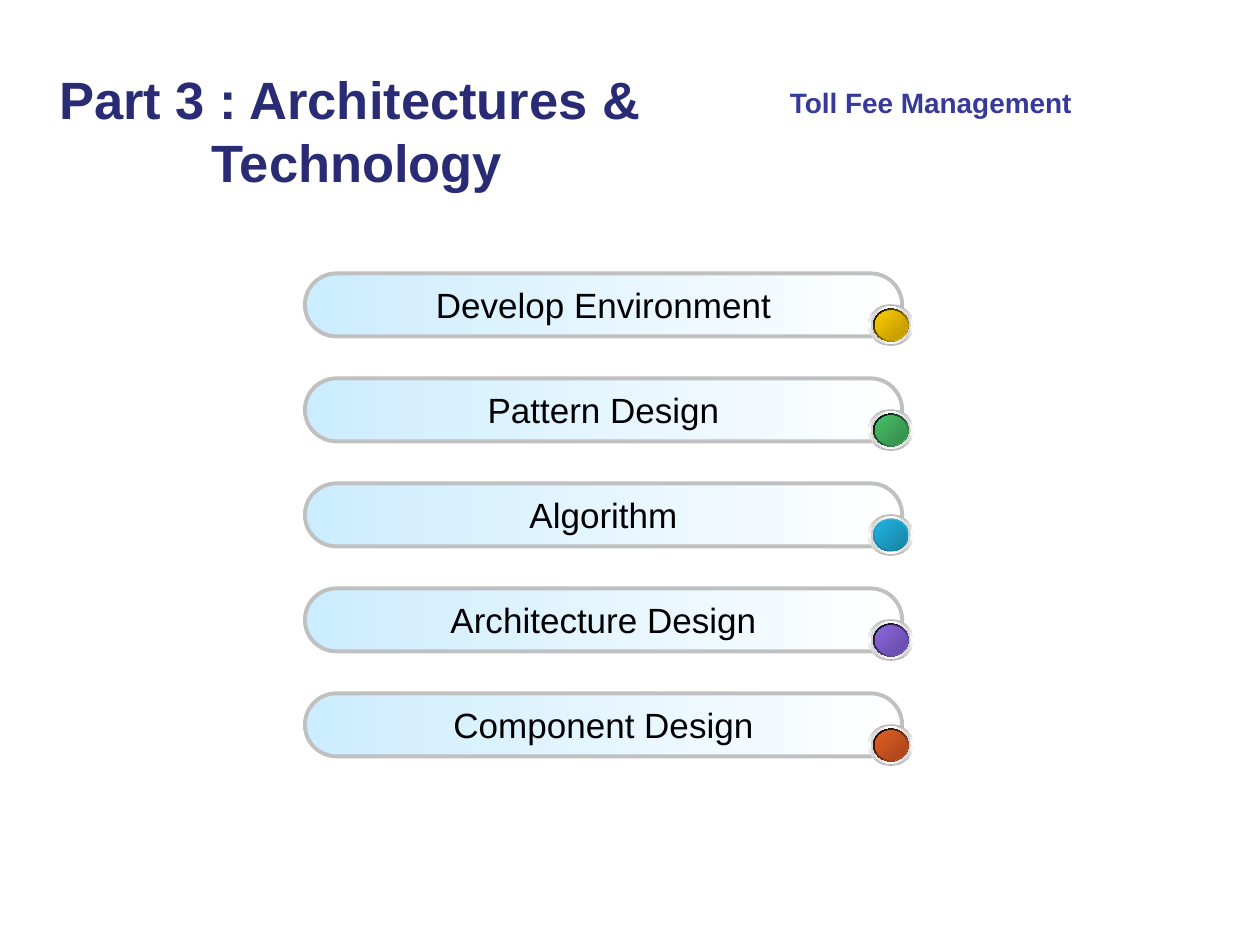
from lxml.etree import SubElement
from pptx import Presentation
from pptx.dml.color import RGBColor
from pptx.enum.shapes import MSO_SHAPE
from pptx.enum.text import MSO_ANCHOR, PP_ALIGN
from pptx.oxml.ns import qn
from pptx.util import Inches, Pt

NAVY = RGBColor(0x29, 0x2B, 0x74)
INDIGO = RGBColor(0x37, 0x39, 0x9B)
BLACK = RGBColor(0x00, 0x00, 0x00)
WHITE = RGBColor(0xFF, 0xFF, 0xFF)
SILVER = RGBColor(0xC0, 0xC0, 0xC0)
PALE_BLUE = RGBColor(0xCC, 0xEC, 0xFF)
GREY = RGBColor(0xB6, 0xB6, 0xB6)
LIGHT_GREY = RGBColor(0xD1, 0xD1, 0xD1)
TEAL = RGBColor(0x36, 0xA1, 0xB6)
DARK_TEAL = RGBColor(0x29, 0x7B, 0x8B)
YELLOW = RGBColor(0xFF, 0xCC, 0x00)
DARK_YELLOW = RGBColor(0xBA, 0x95, 0x00)
GREEN = RGBColor(0x48, 0xBE, 0x67)
DARK_GREEN = RGBColor(0x35, 0x8B, 0x4B)
BLUE = RGBColor(0x21, 0xB3, 0xE1)
RIM_BLUE = RGBColor(0x18, 0x80, 0xA1)
DARK_BLUE = RGBColor(0x18, 0x83, 0xA4)
PURPLE = RGBColor(0x8D, 0x67, 0xE1)
DARK_PURPLE = RGBColor(0x67, 0x4B, 0xA4)
ORANGE = RGBColor(0xE3, 0x5E, 0x23)
DARK_ORANGE = RGBColor(0xA6, 0x45, 0x1A)

TITLE = "Part 3 : Architectures & \vTechnology"
PROJECT = "Toll Fee Management"
# topic, rim colours, rim angle, core colours
TOPICS = [
    ("Develop Environment", (BLACK, YELLOW), 45, (YELLOW, DARK_YELLOW)),
    ("Pattern Design", (BLACK, GREEN), 45, (GREEN, DARK_GREEN)),
    ("Algorithm", (BLUE, RIM_BLUE), 90, (BLUE, DARK_BLUE)),
    ("Architecture Design", (BLACK, PURPLE), 45, (PURPLE, DARK_PURPLE)),
    ("Component Design", (BLACK, ORANGE), 45, (ORANGE, DARK_ORANGE)),
]

BAR_LEFT, BAR_TOP, BAR_WIDTH, BAR_HEIGHT = 2.42, 2.17, 4.74, 0.5
BAR_PITCH = 2.5 / 3
BUTTON_CENTER_X = 7.07
BUTTON_DROP = 0.41  # from the top of a bar to the centre of its button
OUTER, INNER, RIM, CORE = (0.36, 0.33), (0.32, 0.3), (0.28, 0.26), (0.25, 0.23)


def write(shape, text, size, color, bold=False, align=PP_ALIGN.LEFT,
          anchor=MSO_ANCHOR.TOP, wrap=True):
    frame = shape.text_frame
    frame.word_wrap = wrap
    frame.vertical_anchor = anchor
    paragraph = frame.paragraphs[0]
    paragraph.text = text
    paragraph.alignment = align
    for run in paragraph.runs:
        run.font.name = "Arial"
        run.font.size = Pt(size)
        run.font.bold = bold
        run.font.color.rgb = color


def fill_gradient(shape, colors, angle):
    """Spread the colours evenly, with the angle in degrees clockwise."""
    shape.fill.gradient()
    shape.fill.gradient_angle = -angle % 360
    stops = shape.fill._xPr.find(qn("a:gradFill")).find(qn("a:gsLst"))
    for stop in list(stops):
        stops.remove(stop)
    for index, color in enumerate(colors):
        position = 100000 * index // (len(colors) - 1)
        stop = SubElement(stops, qn("a:gs"), pos=str(position))
        SubElement(stop, qn("a:srgbClr"), val=str(color))


def add_gradient_shape(shapes, kind, left, top, width, height, colors, angle):
    shape = shapes.add_shape(kind, Inches(left), Inches(top), Inches(width), Inches(height))
    shape.shadow.inherit = False
    shape.line.fill.background()
    fill_gradient(shape, colors, angle)
    return shape


def add_bar(shapes, top, topic):
    bar = add_gradient_shape(shapes, MSO_SHAPE.ROUNDED_RECTANGLE, BAR_LEFT, top,
                             BAR_WIDTH, BAR_HEIGHT, (PALE_BLUE, WHITE), 0)
    bar.adjustments[0] = 0.5
    bar.line.color.rgb = SILVER
    bar.line.width = Pt(2.25)
    write(bar, topic, 20, BLACK, align=PP_ALIGN.CENTER, anchor=MSO_ANCHOR.MIDDLE, wrap=False)


def add_button(shapes, center_y, rim_colors, rim_angle, core_colors):
    layers = [
        (OUTER, (GREY, WHITE, GREY), 90),
        (INNER, (LIGHT_GREY, WHITE, LIGHT_GREY), 0),
        (RIM, (WHITE, TEAL, WHITE), 45),
        (RIM, rim_colors, rim_angle),
        (CORE, (DARK_TEAL, TEAL, DARK_TEAL), 315),
        (CORE, core_colors, 45),
    ]
    button = shapes.add_group_shape()
    for (width, height), colors, angle in layers:
        add_gradient_shape(button.shapes, MSO_SHAPE.OVAL, BUTTON_CENTER_X - width / 2,
                           center_y - height / 2, width, height, colors, angle)


def main():
    deck = Presentation()
    deck.slide_width, deck.slide_height = Inches(10), Inches(7.5)
    shapes = deck.slides.add_slide(deck.slide_layouts[6]).shapes

    title = shapes.add_textbox(Inches(0.17), Inches(0.72), Inches(5.33), Inches(0.62))
    write(title, TITLE, 30, NAVY, bold=True, align=PP_ALIGN.CENTER, anchor=MSO_ANCHOR.MIDDLE)
    project = shapes.add_textbox(Inches(6.17), Inches(0.63), Inches(2.58), Inches(0.37))
    write(project, PROJECT, 16, INDIGO, bold=True)

    for row, (topic, rim_colors, rim_angle, core_colors) in enumerate(TOPICS):
        top = BAR_TOP + row * BAR_PITCH
        add_bar(shapes, top, topic)
        add_button(shapes, top + BUTTON_DROP, rim_colors, rim_angle, core_colors)

    deck.save("out.pptx")


if __name__ == "__main__":
    main()
